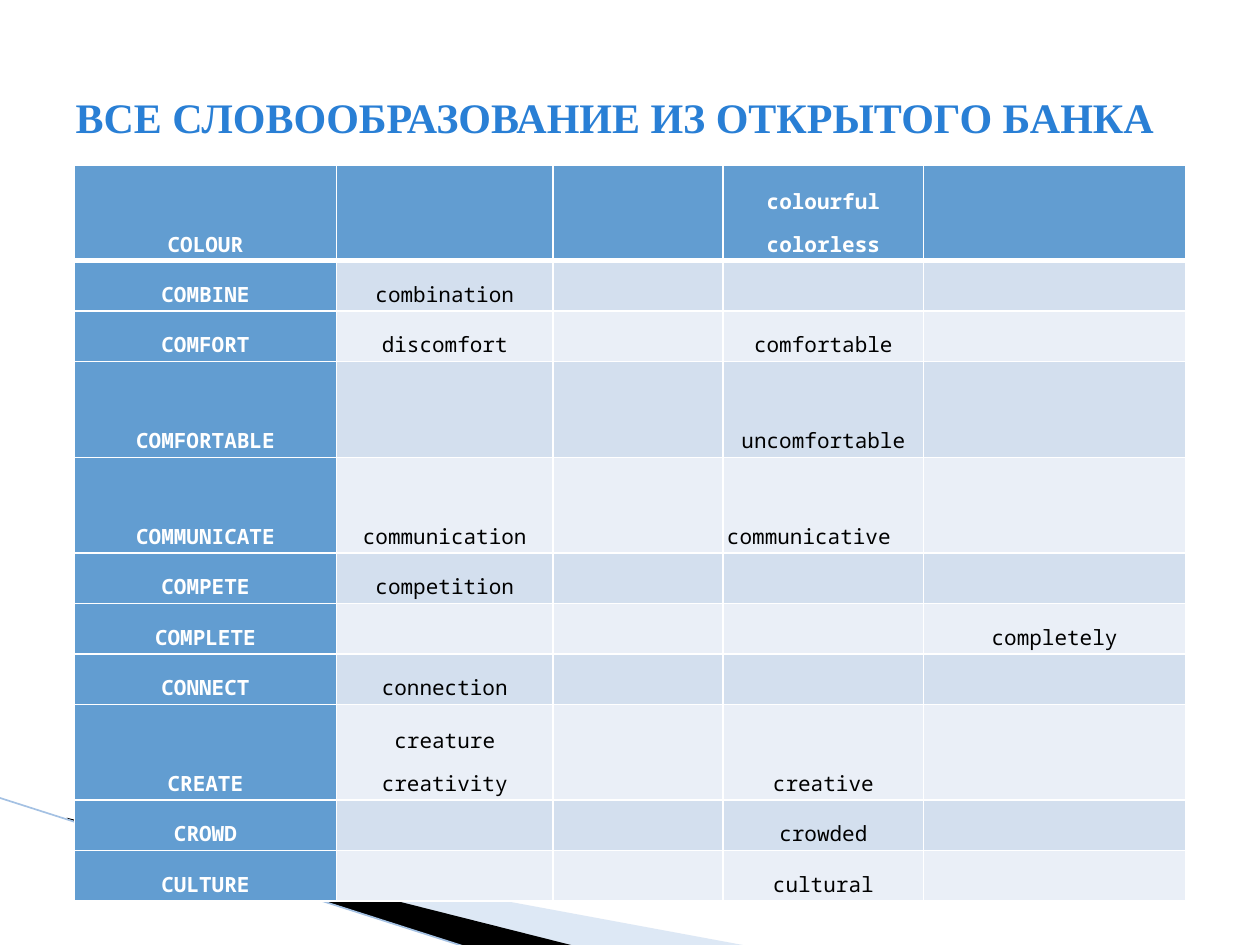
from lxml.etree import SubElement as Sub
from pptx import Presentation
from pptx.dml.color import RGBColor as RGB
from pptx.enum.shapes import MSO_CONNECTOR as Conn
from pptx.enum.text import MSO_ANCHOR as Anchor, PP_ALIGN as Align
from pptx.oxml.ns import qn
from pptx.util import Inches, Pt

HUES = {
    "title": "297FD5", "head": "629DD1", "odd": "D3DFEE", "even": "EAEFF7",
    "white": "FFFFFF", "black": "000000", "wedge": "ABC6E6", "line": "A4C1E3",
}
SANS, SERIF = "Noto Sans Mono", "Times New Roman"

# Base word, noun, verb, adjective, adverb
WORDS = [
    ("COLOUR", "", "", "colourful\ncolorless", ""),
    ("COMBINE", "combination", "", "", ""),
    ("COMFORT", "discomfort", "", "comfortable", ""),
    ("COMFORTABLE", "", "", "uncomfortable", ""),
    ("COMMUNICATE", "communication", "", "communicative", ""),
    ("COMPETE", "competition", "", "", ""),
    ("COMPLETE", "", "", "", "completely"),
    ("CONNECT", "connection", "", "", ""),
    ("CREATE", "creature\ncreativity", "", "creative", ""),
    ("CROWD", "", "", "crowded", ""),
    ("CULTURE", "", "", "cultural", ""),
]
COLS = [2.08, 1.72, 1.35, 1.59, 2.08]
TALL = {0, 3, 4, 8}


class Deck:
    def __init__(self):
        self.prs = Presentation()
        self.prs.slide_width, self.prs.slide_height = Inches(10), Inches(7.5)
        self.slide = self.prs.slides.add_slide(self.prs.slide_layouts[5])
        self.shapes = self.slide.shapes

    def font(self, para, name, size, hue, bold):
        font = para.font
        font.name, font.size, font.bold = name, Pt(size), bold
        font.color.rgb = RGB.from_string(HUES[hue])

    def title(self, text, left, top, width, height):
        box = self.shapes.title
        box.left, box.top = Inches(left), Inches(top)
        box.width, box.height = Inches(width), Inches(height)
        frame = box.text_frame
        frame.text, frame.vertical_anchor = text, Anchor.MIDDLE
        para = frame.paragraphs[0]
        para.alignment = Align.LEFT
        self.font(para, SERIF, 24, "title", True)

    def wedge(self, points, hue, alpha=None):
        first, *rest = [(Inches(x), Inches(y)) for x, y in points]
        pen = self.shapes.build_freeform(*first)
        pen.add_line_segments(rest, close=True)
        shape = pen.convert_to_shape()
        shape.shadow.inherit = False
        shape.line.fill.background()
        shape.fill.solid()
        shape.fill.fore_color.rgb = RGB.from_string(HUES[hue])
        if alpha:
            tone = shape.fill._xPr.find(".//" + qn("a:srgbClr"))
            Sub(tone, qn("a:alpha"), val=str(alpha * 1000))

    def line(self, x1, y1, x2, y2, hue, width):
        ends = [Inches(n) for n in (x1, y1, x2, y2)]
        line = self.shapes.add_connector(Conn.STRAIGHT, *ends)
        line.line.color.rgb = RGB.from_string(HUES[hue])
        line.line.width = Pt(width)
        Sub(line._element.spPr, qn("a:effectLst"))

    def edges(self, cell, top, bottom):
        props = cell._tc.get_or_add_tcPr()
        for side, width in zip("LRTB", (1, 1, top, bottom)):
            edge = Sub(props, qn("a:ln" + side), w=str(Pt(width)))
            fill = Sub(edge, qn("a:solidFill"))
            Sub(fill, qn("a:srgbClr"), val=HUES["white"])

    def cell(self, cell, text, fill, hue, bold, align):
        cell.fill.solid()
        cell.fill.fore_color.rgb = RGB.from_string(HUES[fill])
        cell.vertical_anchor = Anchor.BOTTOM
        cell.margin_left = cell.margin_right = Inches(0.03)
        cell.margin_top = cell.margin_bottom = Inches(0.02)
        cell.text_frame.text = text
        for para in cell.text_frame.paragraphs:
            para.alignment, para.line_spacing = align, 1.5
            self.font(para, SANS, 12, hue, bold)

    def table(self, left, top, rows, widths, heights):
        size = [Inches(n) for n in (left, top, sum(widths), sum(heights))]
        grid = self.shapes.add_table(len(rows), len(widths), *size).table
        grid.horz_banding = False
        for col, width in zip(grid.columns, widths):
            col.width = Inches(width)
        for r, words in enumerate(rows):
            grid.rows[r].height = Inches(heights[r])
            for c, text in enumerate(words):
                cell = grid.cell(r, c)
                head = r == 0 or c == 0
                fill = "head" if head else "odd" if r % 2 else "even"
                hue = "white" if head else "black"
                align = Align.LEFT if text == "communicative" else Align.CENTER
                self.edges(cell, 3 if r == 1 else 1, 3 if r == 0 else 1)
                self.cell(cell, text, fill, hue, head, align)


def main():
    deck = Deck()

    # Corner decoration
    deck.wedge([(0.55, 6.51), (5.95, 7.51), (4.56, 7.51), (0.55, 6.5)], "wedge", 40)
    deck.wedge([(0.53, 6.49), (4.57, 7.51), (3.72, 7.52), (0.54, 6.5)], "black")
    deck.line(-0.01, 6.33, 3.71, 7.52, "line", 0.95)

    # Word table
    heights = [0.76 if r in TALL else 0.4 for r in range(len(WORDS))]
    deck.table(0.59, 1.31, WORDS, COLS, heights)

    # Title
    deck.title("ВСЕ СЛОВООБРАЗОВАНИЕ ИЗ ОТКРЫТОГО БАНКА", 0.5, 0.3, 9, 1.25)

    deck.prs.save("out.pptx")


if __name__ == "__main__":
    main()
